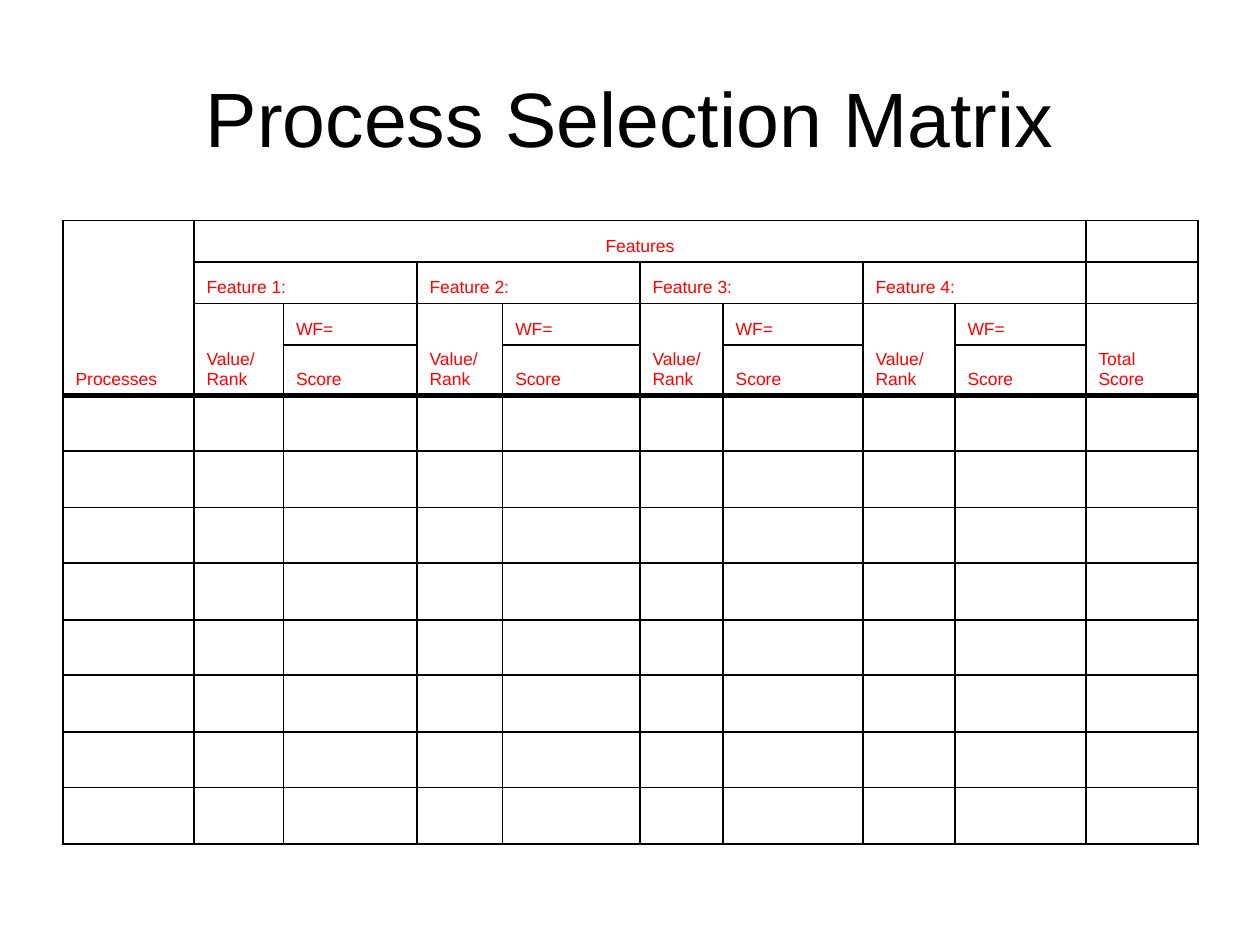
from dataclasses import dataclass

from lxml import etree
from pptx import Presentation
from pptx.dml.color import RGBColor
from pptx.enum.text import MSO_ANCHOR, PP_ALIGN
from pptx.oxml.ns import qn
from pptx.util import Inches, Pt

CENTER = PP_ALIGN.CENTER
LEFT = PP_ALIGN.LEFT
BOTTOM = MSO_ANCHOR.BOTTOM
MIDDLE = MSO_ANCHOR.MIDDLE
TITLE_ONLY = 5

COL_WIDTHS = [1.04, 0.71, 1.06, 0.68, 1.09, 0.66, 1.11, 0.73, 1.04, 0.89]
ROW_HEIGHTS = [0.33, 0.33, 0.33, 0.4] + [0.44, 0.45] * 4
HEADER_ROWS = 4
FEATURES = 4
TOTAL_COL = len(COL_WIDTHS) - 1


@dataclass(frozen=True)
class Theme:
    font: str = "Arial"
    title_size: int = 44
    cell_size: int = 10
    thin: int = 1
    thick: int = 3
    ink: RGBColor = RGBColor(0, 0, 0)
    label: RGBColor = RGBColor(255, 0, 0)
    paper: RGBColor = RGBColor(255, 255, 255)


THEME = Theme()


def add_run(p, text, size, color):
    r = p.add_run()
    r.text = text
    r.font.name = THEME.font
    r.font.size = Pt(size)
    r.font.color.rgb = color


def add_title(slide, text):
    sp = slide.shapes.title
    sp.left, sp.top = Inches(0.5), Inches(0.3)
    sp.width, sp.height = Inches(9), Inches(1.25)
    tf = sp.text_frame
    tf.vertical_anchor = MIDDLE
    p = tf.paragraphs[0]
    p.alignment = CENTER
    add_run(p, text, THEME.title_size, THEME.ink)


def set_border(cell, side, width):
    ln = etree.SubElement(cell._tc.get_or_add_tcPr(), qn(f"a:ln{side}"), w=str(Pt(width)))
    fill = etree.SubElement(ln, qn("a:solidFill"))
    etree.SubElement(fill, qn("a:srgbClr"), val=str(THEME.ink))


def format_cell(cell, row):
    """Draw the cell's edges, with a thick rule between header and body."""
    last_row = row + (cell.span_height if cell.is_merge_origin else 1) - 1
    top = THEME.thick if row == HEADER_ROWS else THEME.thin
    bottom = THEME.thick if last_row == HEADER_ROWS - 1 else THEME.thin
    for side, width in zip("LRTB", (THEME.thin, THEME.thin, top, bottom)):
        set_border(cell, side, width)
    cell.fill.solid()
    cell.fill.fore_color.rgb = THEME.paper
    cell.vertical_anchor = BOTTOM
    if not cell.text_frame.text:
        # Keeps empty cells from stretching the low header rows
        etree.SubElement(cell.text_frame.paragraphs[0]._p, qn("a:endParaRPr"),
                         sz=str(THEME.cell_size * 100))


def add_label(table, row, col, *lines, rows=1, cols=1, align=LEFT):
    """Write a header label, one paragraph a line, over the given span."""
    cell = table.cell(row, col)
    if rows > 1 or cols > 1:
        cell.merge(table.cell(row + rows - 1, col + cols - 1))
    tf = cell.text_frame
    for i, line in enumerate(lines):
        p = tf.add_paragraph() if i else tf.paragraphs[0]
        p.alignment = align
        add_run(p, line, THEME.cell_size, THEME.label)


def add_header(table):
    add_label(table, 0, 0, "Processes", rows=HEADER_ROWS)
    add_label(table, 0, 1, "Features", cols=2 * FEATURES, align=CENTER)
    for i in range(FEATURES):
        col = 1 + 2 * i
        rank = ("Value/", "Rank") if i in (0, FEATURES - 1) else ("Value/Rank",)
        add_label(table, 1, col, f"Feature {i + 1}:", cols=2)
        add_label(table, 2, col, *rank, rows=2)
        add_label(table, 2, col + 1, "WF=")
        add_label(table, 3, col + 1, "Score")
    add_label(table, 2, TOTAL_COL, "Total Score", rows=2)


def add_matrix(slide):
    table = slide.shapes.add_table(
        len(ROW_HEIGHTS), len(COL_WIDTHS),
        Inches(0.5), Inches(1.75), Inches(9), Inches(4.95)).table
    table.first_row = table.horz_banding = False
    for column, width in zip(table.columns, COL_WIDTHS):
        column.width = Inches(width)
    for row, height in zip(table.rows, ROW_HEIGHTS):
        row.height = Inches(height)
    add_header(table)
    for i, row in enumerate(table.rows):
        for cell in row.cells:
            format_cell(cell, i)


def main():
    prs = Presentation()
    prs.slide_width, prs.slide_height = Inches(10), Inches(7.5)
    slide = prs.slides.add_slide(prs.slide_layouts[TITLE_ONLY])
    add_title(slide, "Process Selection Matrix")
    add_matrix(slide)
    prs.save("out.pptx")


if __name__ == "__main__":
    main()
